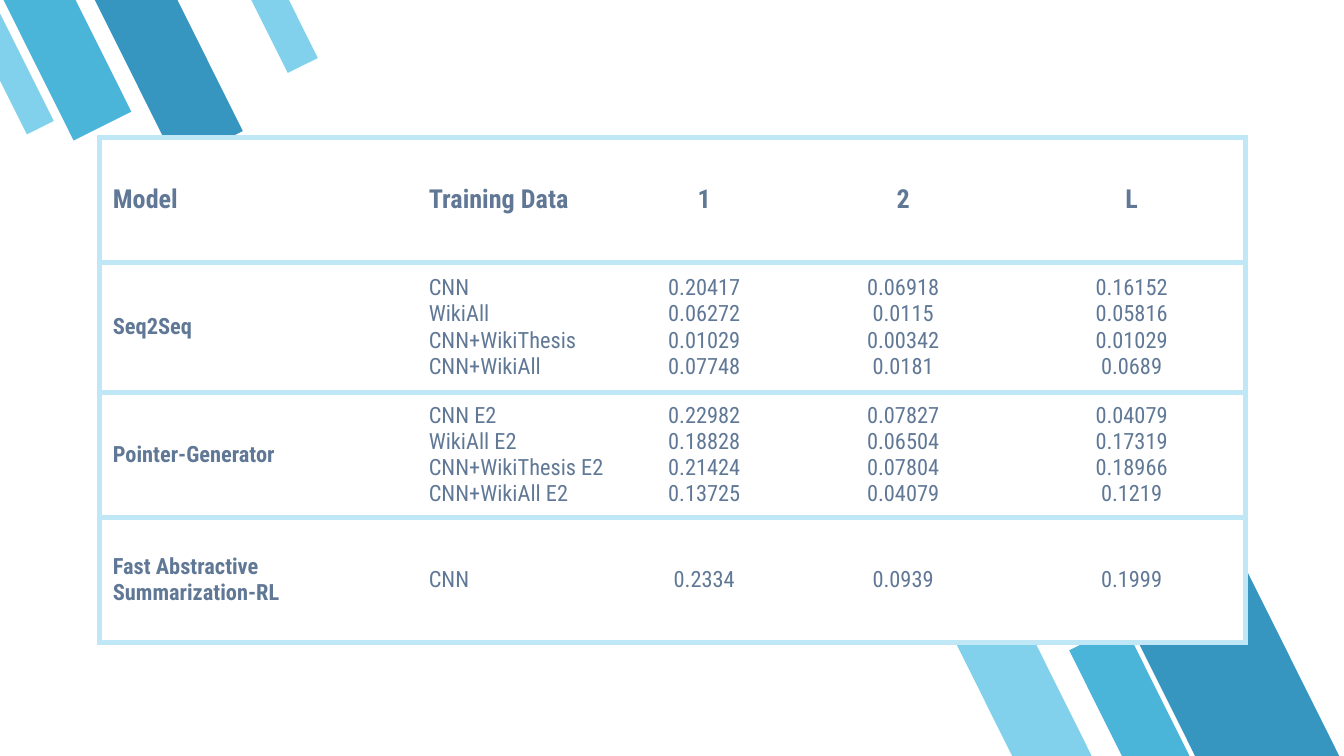
from lxml import etree
from pptx import Presentation
from pptx.dml.color import RGBColor
from pptx.enum.shapes import MSO_SHAPE
from pptx.enum.text import MSO_ANCHOR, PP_ALIGN
from pptx.oxml.ns import qn
from pptx.util import Inches, Pt

STRIPE = MSO_SHAPE.FLOWCHART_MANUAL_INPUT
MIDDLE = MSO_ANCHOR.MIDDLE
LEFT, CENTER = PP_ALIGN.LEFT, PP_ALIGN.CENTER

THEME = {
    "font": "Roboto Condensed",
    "header_size": Pt(14),
    "body_size": Pt(12),
    "border_width": Pt(3),
    "text": "607896",
    "border": "C0E7F6",
    "background": "FFFFFF",
    "light": "81D1EC",
    "medium": "4BB5D9",
    "dark": "3796BF",
}

presentation = Presentation()
presentation.slide_width = Inches(10)
presentation.slide_height = Inches(10 * 9 / 16)
slide = presentation.slides.add_slide(presentation.slide_layouts[6])

# All lengths below are counted in hundredths of the slide width
UNIT = presentation.slide_width // 100


def paint(shape, color):
    shape.shadow.inherit = False
    shape.fill.solid()
    shape.fill.fore_color.rgb = RGBColor.from_string(THEME[color])
    shape.line.fill.background()


def set_border(cell, side, visible):
    line = etree.SubElement(cell._tc.get_or_add_tcPr(), qn(f"a:ln{side}"))
    if visible:
        line.set("w", str(THEME["border_width"]))
        fill = etree.SubElement(line, qn("a:solidFill"))
        etree.SubElement(fill, qn("a:srgbClr"), val=THEME["border"])
    else:
        etree.SubElement(line, qn("a:noFill"))


# Slanted stripes: left, top, width, height, rotation, color
LOWER, UPPER = 153.5, 333.5
stripes = [
    (73.3, 45, 5.3, 13.2, LOWER, "light"),
    (85.3, 35.9, 9.6, 23.9, LOWER, "dark"),
    (81.8, 46.8, 4.5, 11.1, LOWER, "medium"),
    (2.6, -1.8, 4.8, 11.8, UPPER, "medium"),
    (9.8, -2, 5.5, 13.7, UPPER, "dark"),
    (19.9, -1, 2.5, 6.2, UPPER, "light"),
]
for *box, rotation, color in stripes:
    shape = slide.shapes.add_shape(STRIPE, *(int(UNIT * length) for length in box))
    shape.rotation = rotation
    shape._element.spPr.xfrm.set("flipH", "1")
    paint(shape, color)

# Stripe cut off by the left edge
builder = slide.shapes.build_freeform(2, 10, scale=UNIT)
builder.add_line_segments([(4.2, 9), (0, 0.6), (0, 5.9)], close=True)
paint(builder.convert_to_shape(), "light")

# Results: each cell is a list of lines
rows = [
    [["Model"], ["Training Data"], ["1"], ["2"], ["L"]],
    [
        ["Seq2Seq"],
        ["CNN", "WikiAll", "CNN+WikiThesis", "CNN+WikiAll"],
        ["0.20417", "0.06272", "0.01029", "0.07748"],
        ["0.06918", "0.0115", "0.00342", "0.0181"],
        ["0.16152", "0.05816", "0.01029", "0.0689"],
    ],
    [
        ["Pointer-Generator"],
        ["CNN E2", "WikiAll E2", "CNN+WikiThesis E2", "CNN+WikiAll E2"],
        ["0.22982", "0.18828", "0.21424", "0.13725"],
        ["0.07827", "0.06504", "0.07804", "0.04079"],
        ["0.04079", "0.17319", "0.18966", "0.1219"],
    ],
    [["Fast Abstractive Summarization-RL"], ["CNN"], ["0.2334"], ["0.0939"], ["0.1999"]],
]
column_widths = [23.5, 15.2, 12.6, 17, 17]
row_heights = [9.3, 9.7, 9.3, 9.3]

# Table grid
frame = slide.shapes.add_table(
    len(rows), len(column_widths),
    int(UNIT * 7.4), int(UNIT * 10.2),
    int(UNIT * sum(column_widths)), int(UNIT * sum(row_heights)),
)
table = frame.table
table.first_row = table.horz_banding = False
for column, width in zip(table.columns, column_widths):
    column.width = int(UNIT * width)
for row, height in zip(table.rows, row_heights):
    row.height = int(UNIT * height)

# Table cells
last_column = len(column_widths) - 1
for row_index, row in enumerate(rows):
    for column_index, lines in enumerate(row):
        cell = table.cell(row_index, column_index)
        cell.vertical_anchor = MIDDLE
        cell.margin_left = cell.margin_right = UNIT
        cell.margin_top = cell.margin_bottom = int(UNIT * 0.7)
        set_border(cell, "L", column_index == 0)
        set_border(cell, "R", column_index == last_column)
        set_border(cell, "T", True)
        set_border(cell, "B", True)
        cell.fill.solid()
        cell.fill.fore_color.rgb = RGBColor.from_string(THEME["background"])

        text_frame = cell.text_frame
        for line_index, line in enumerate(lines):
            paragraph = text_frame.add_paragraph() if line_index else text_frame.paragraphs[0]
            paragraph.alignment = CENTER if column_index > 1 else LEFT
            run = paragraph.add_run()
            run.text = line
            run.font.name = THEME["font"]
            run.font.size = THEME["body_size" if row_index else "header_size"]
            run.font.bold = row_index == 0 or column_index == 0
            run.font.color.rgb = RGBColor.from_string(THEME["text"])

presentation.save("out.pptx")
